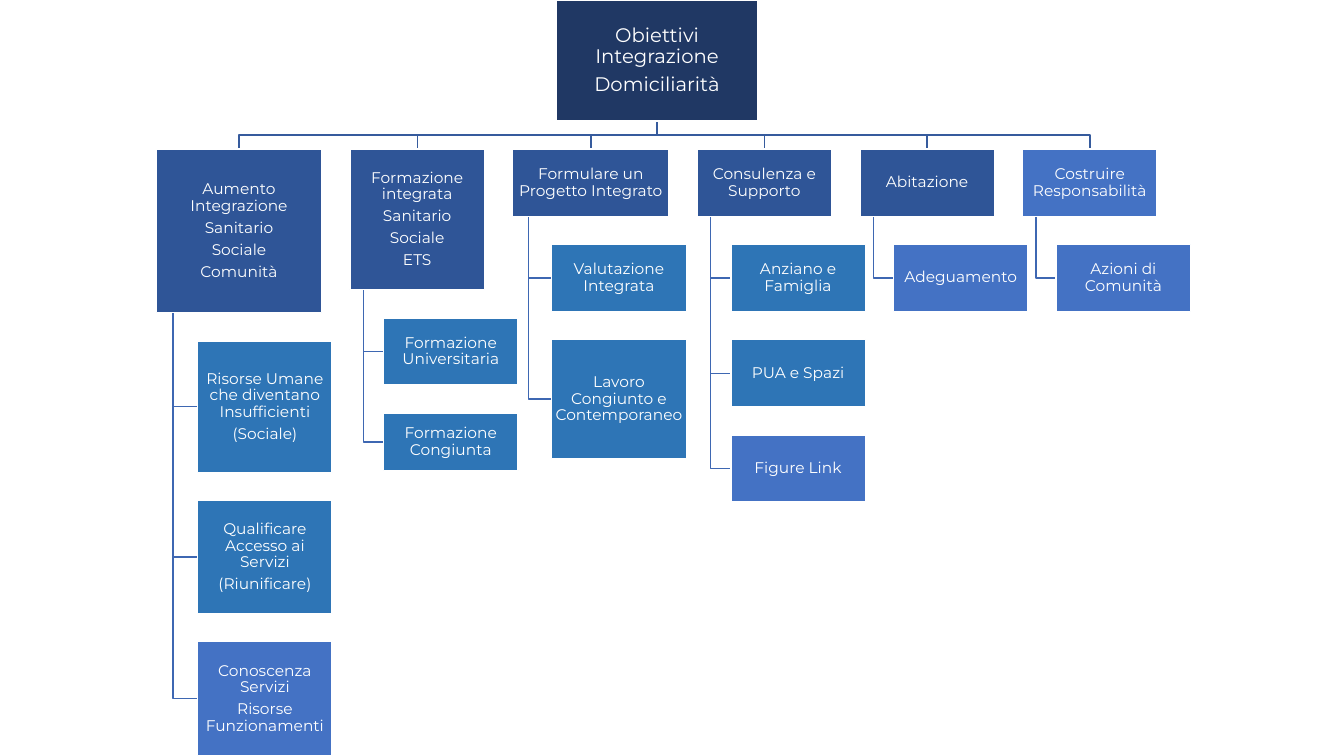
from dataclasses import dataclass

from pptx import Presentation
from pptx import util as u
from pptx.dml.color import RGBColor
from pptx.enum import shapes, text

FONT = "Montserrat"
NAVY, DARK, MID, LIGHT = "203864", "2F5597", "2E75B6", "4472C4"
WHITE, TRUNK, BRANCH = "FFFFFF", "365B9D", "3E67B2"

# Lengths in centimetres
GAP, WIDE, HIGH = 0.71, 3.39, 1.69
LEFT, TOP = 3.94, 3.76

Point = tuple[float, float]


@dataclass
class Node:
    lines: list[str]
    fill: str = MID
    high: float = HIGH
    wide: float = WIDE
    size: int = 11
    x: float = 0
    y: float = 0

    @property
    def mid(self) -> float:
        return self.x + self.wide / 2

    @property
    def base(self) -> float:
        return self.y + self.high


@dataclass
class Branch:
    head: Node
    kids: list[Node]


ROOT = Node(["Obiettivi Integrazione", "Domiciliarità"], NAVY, 3.03, 5.08, 14, 14.02, 0.02)

TREE = [
    Branch(
        Node(["Aumento Integrazione", "Sanitario", "Sociale", "Comunità"], DARK, 4.12, 4.17),
        [
            Node(["Risorse Umane che diventano Insufficienti", "(Sociale)"], high=3.32),
            Node(["Qualificare Accesso ai Servizi", "(Riunificare)"], high=2.84),
            Node(["Conoscenza Servizi", "Risorse Funzionamenti"], LIGHT, 2.87),
        ],
    ),
    Branch(
        Node(["Formazione integrata", "Sanitario", "Sociale", "ETS"], DARK, 3.54),
        [
            Node(["Formazione Universitaria"]),
            Node(["Formazione Congiunta"], high=1.45),
        ],
    ),
    Branch(
        Node(["Formulare un Progetto Integrato"], DARK, wide=3.94),
        [
            Node(["Valutazione Integrata"]),
            Node(["Lavoro Congiunto e Contemporaneo"], high=3),
        ],
    ),
    Branch(
        Node(["Consulenza e Supporto"], DARK),
        [
            Node(["Anziano e Famiglia"]),
            Node(["PUA e Spazi"]),
            Node(["Figure Link"], LIGHT),
        ],
    ),
    Branch(Node(["Abitazione"], DARK), [Node(["Adeguamento"], LIGHT)]),
    Branch(Node(["Costruire Responsabilità"], LIGHT), [Node(["Azioni di Comunità"], LIGHT)]),
]


def tint(code: str) -> RGBColor:
    return RGBColor.from_string(code)


def place(tree: list[Branch]) -> None:
    """Set heads side by side and hang the children below each one."""
    x = LEFT
    for branch in tree:
        head = branch.head
        head.x, head.y = x, TOP
        y = head.base + GAP
        for kid in branch.kids:
            kid.x, kid.y = x + head.wide / 4, y
            y = kid.base + GAP
        x += head.wide + GAP


def write(frame, lines: list[str], *, size: int, color: str = WHITE) -> None:
    frame.word_wrap = True
    frame.vertical_anchor = text.MSO_ANCHOR.MIDDLE
    frame.margin_left = frame.margin_right = u.Cm(0.02)
    frame.margin_top = frame.margin_bottom = u.Cm(0.02)
    for i, line in enumerate(lines):
        para = frame.paragraphs[0] if i == 0 else frame.add_paragraph()
        para.alignment = text.PP_ALIGN.CENTER
        para.line_spacing = 0.9
        para.space_after = u.Pt(size * 0.35)
        run = para.add_run()
        run.text = line
        run.font.name = FONT
        run.font.size = u.Pt(size)
        run.font.color.rgb = tint(color)


def draw(slide, node: Node) -> None:
    area = [u.Cm(n) for n in (node.x, node.y, node.wide, node.high)]
    box = slide.shapes.add_shape(shapes.MSO_SHAPE.RECTANGLE, *area)
    box.shadow.inherit = False
    box.fill.solid()
    box.fill.fore_color.rgb = tint(node.fill)
    box.line.color.rgb = tint(WHITE)
    box.line.width = u.Pt(1)
    write(box.text_frame, node.lines, size=node.size)


def link(slide, points: list[Point], color: str) -> None:
    start, *rest = [(u.Cm(x), u.Cm(y)) for x, y in points]
    pen = slide.shapes.build_freeform(*start)
    pen.add_line_segments(rest, close=False)
    path = pen.convert_to_shape()
    path.shadow.inherit = False
    path.fill.background()
    path.line.color.rgb = tint(color)
    path.line.width = u.Pt(1)


def main() -> None:
    deck = Presentation()
    deck.slide_width, deck.slide_height = u.Cm(33.87), u.Cm(19.05)
    slide = deck.slides.add_slide(deck.slide_layouts[6])
    place(TREE)

    # Elbow lines, behind the boxes
    bend = (ROOT.base + TOP) / 2
    for branch in TREE:
        head = branch.head
        link(slide, [(ROOT.mid, ROOT.base), (ROOT.mid, bend), (head.mid, bend), (head.mid, TOP)], TRUNK)
        spine = head.x + head.wide / 10
        for kid in branch.kids:
            level = kid.y + kid.high / 2
            link(slide, [(spine, head.base), (spine, level), (kid.x, level)], BRANCH)

    # Boxes
    draw(slide, ROOT)
    for branch in TREE:
        for node in [branch.head, *branch.kids]:
            draw(slide, node)

    deck.save("out.pptx")


if __name__ == "__main__":
    main()
